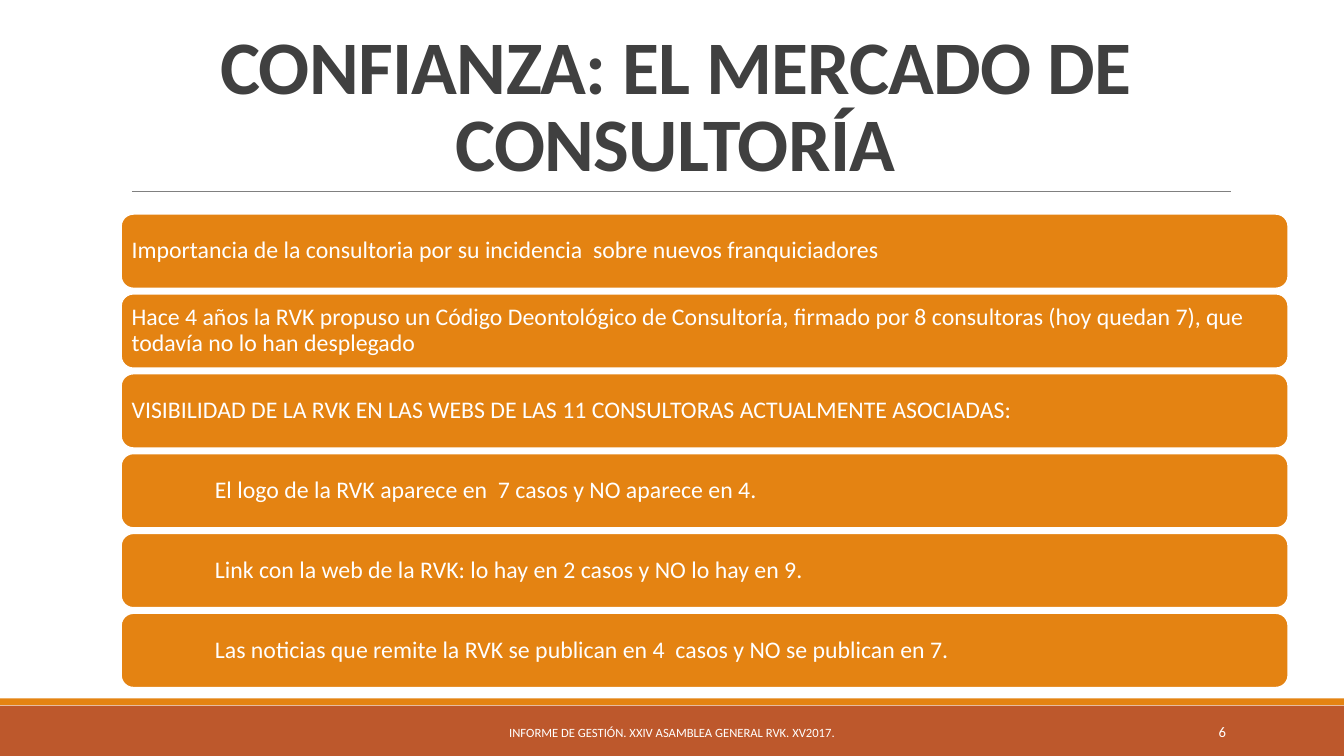
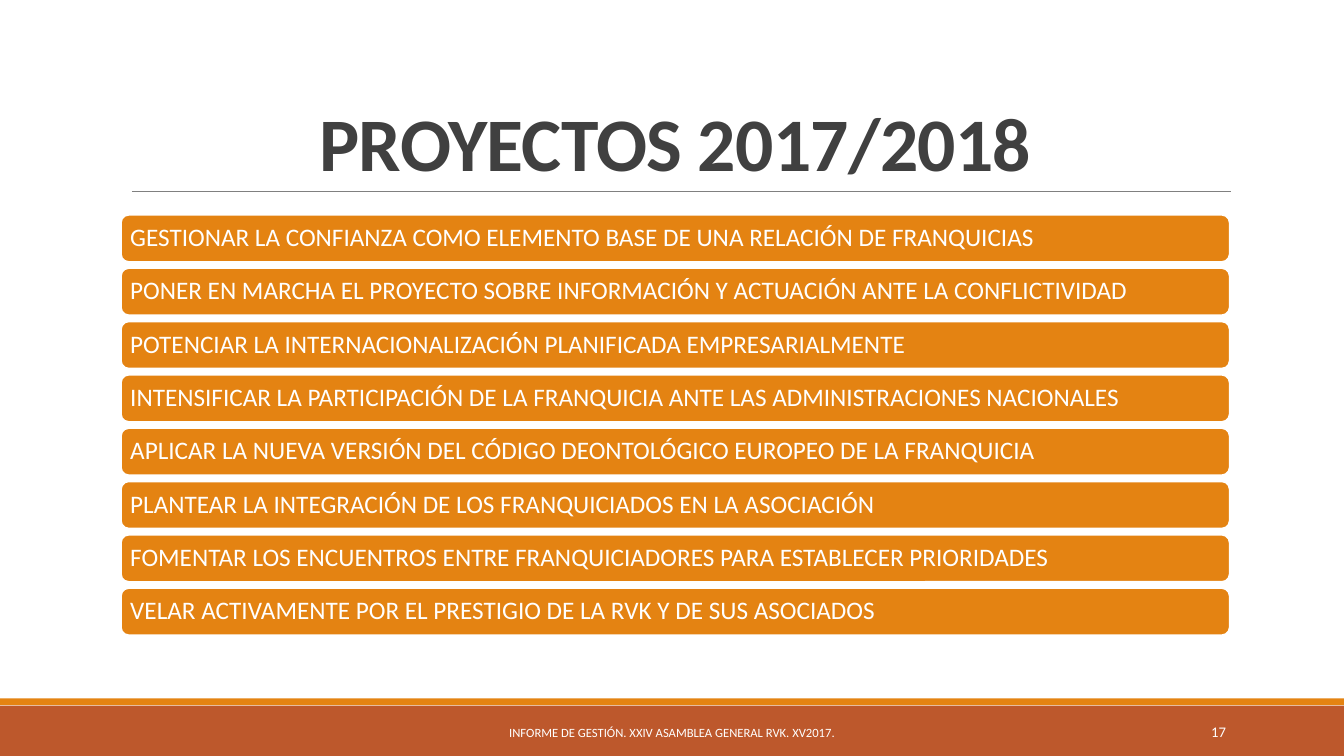
from pptx import Presentation
from pptx.dml.color import RGBColor
from pptx.enum import shapes, text
from pptx.oxml.ns import qn
from pptx.util import Pt
from lxml import etree

COLORS = {"rust": "BD582C", "orange": "E48312", "rule": "808080",
          "title": "404040", "white": "FFFFFF"}
FONT = "Calibri"
LEFT = 86.4
FOOTER = "INFORME DE GESTIÓN. XXIV ASAMBLEA GENERAL RVK. XV2017."

# Each bar: indent in points, wording
SLIDES = [
    {"title": "CONFIANZA: EL MERCADO DE CONSULTORÍA", "number": "6",
     "top": 152.8, "width": 833.8, "height": 53.3, "pitch": 57.03, "size": 17,
     "bars": [
         (0, "Importancia de la consultoria por su incidencia  sobre nuevos franquiciadores"),
         (0, "Hace 4 años la RVK propuso un Código Deontológico de Consultoría, firmado por "
             "8 consultoras (hoy quedan 7), que todavía no lo han desplegado"),
         (0, "VISIBILIDAD DE LA RVK EN LAS WEBS DE LAS 11 CONSULTORAS ACTUALMENTE ASOCIADAS:"),
         (59.5, "El logo de la RVK aparece en  7 casos y NO aparece en 4."),
         (59.5, "Link con la web de la RVK: lo hay en 2 casos y NO lo hay en 9."),
         (59.5, "Las noticias que remite la RVK se publican en 4  casos y NO se publican en 7."),
     ]},
    {"title": "PROYECTOS 2017/2018", "number": "17",
     "top": 153.4, "width": 792, "height": 33.7, "pitch": 38.09, "size": 18,
     "bars": [
         (0, "GESTIONAR LA CONFIANZA COMO ELEMENTO BASE DE UNA RELACIÓN DE FRANQUICIAS"),
         (0, "PONER EN MARCHA EL PROYECTO SOBRE INFORMACIÓN Y ACTUACIÓN ANTE LA CONFLICTIVIDAD"),
         (0, "POTENCIAR LA INTERNACIONALIZACIÓN PLANIFICADA EMPRESARIALMENTE"),
         (0, "INTENSIFICAR LA PARTICIPACIÓN DE LA FRANQUICIA ANTE LAS ADMINISTRACIONES NACIONALES"),
         (0, "APLICAR LA NUEVA VERSIÓN DEL CÓDIGO DEONTOLÓGICO EUROPEO DE LA FRANQUICIA"),
         (0, "PLANTEAR LA INTEGRACIÓN DE LOS FRANQUICIADOS EN LA ASOCIACIÓN"),
         (0, "FOMENTAR LOS ENCUENTROS ENTRE FRANQUICIADORES PARA ESTABLECER PRIORIDADES"),
         (0, "VELAR ACTIVAMENTE POR EL PRESTIGIO DE LA RVK Y DE SUS ASOCIADOS"),
     ]},
]


def add_block(slide, kind, box, fill):
    block = slide.shapes.add_shape(kind, *map(Pt, box))
    block.shadow.inherit = False
    block.fill.solid()
    block.fill.fore_color.rgb = RGBColor.from_string(COLORS[fill])
    block.line.fill.background()
    return block


def write(shape, wording, size, align, color="white", bold=False,
          anchor=text.MSO_ANCHOR.MIDDLE):
    frame = shape.text_frame
    frame.word_wrap = True
    frame.vertical_anchor = anchor
    paragraph = frame.paragraphs[0]
    paragraph.text = wording
    paragraph.alignment = align
    font = paragraph.font
    font.name, font.size, font.bold = FONT, Pt(size), bold
    font.color.rgb = RGBColor.from_string(COLORS[color])
    return paragraph


prs = Presentation()
prs.slide_width, prs.slide_height = Pt(960), Pt(540)

for content in SLIDES:
    slide = prs.slides.add_slide(prs.slide_layouts[6])

    # Bottom bands
    add_block(slide, shapes.MSO_SHAPE.RECTANGLE, (0, 504, 960, 36), "rust")
    add_block(slide, shapes.MSO_SHAPE.RECTANGLE, (0, 498.8, 960, 4.8), "orange")

    # Title and the rule below it
    rule = slide.shapes.add_connector(shapes.MSO_CONNECTOR.STRAIGHT,
                                      Pt(94.3), Pt(136.8), Pt(879), Pt(136.8))
    rule.line.color.rgb = RGBColor.from_string(COLORS["rule"])
    rule.line.width = Pt(0.5)
    etree.SubElement(rule._element.spPr, qn("a:effectLst"))

    title = slide.shapes.add_textbox(Pt(LEFT), Pt(22.6), Pt(792), Pt(114.2))
    heading = write(title, content["title"], 54, text.PP_ALIGN.CENTER, "title", True,
                    text.MSO_ANCHOR.BOTTOM)
    heading.line_spacing = 0.85
    heading.runs[0]._r.get_or_add_rPr().set("spc", "-50")

    # Stacked message bars
    for row, (indent, message) in enumerate(content["bars"]):
        box = (LEFT, content["top"] + row * content["pitch"],
               content["width"], content["height"])
        bar = add_block(slide, shapes.MSO_SHAPE.ROUNDED_RECTANGLE, box, "orange")
        bar.line.color.rgb = RGBColor.from_string(COLORS["white"])
        bar.line.width = Pt(1.25)
        line = write(bar, message, content["size"], text.PP_ALIGN.LEFT)
        line.line_spacing = 0.9
        frame = bar.text_frame
        frame.margin_left = frame.margin_right = Pt(5)
        frame.margin_top = frame.margin_bottom = Pt(5)
        if indent:
            line._p.get_or_add_pPr().set("marL", str(Pt(indent)))

    # Footer and slide number
    for left, width, wording, size, align in (
            (290.2, 379.4, FOOTER, 9, text.PP_ALIGN.CENTER),
            (779.8, 103, content["number"], 10.5, text.PP_ALIGN.RIGHT)):
        note = slide.shapes.add_textbox(Pt(left), Pt(508.5), Pt(width), Pt(28.8))
        write(note, wording, size, align)

prs.save("out.pptx")
